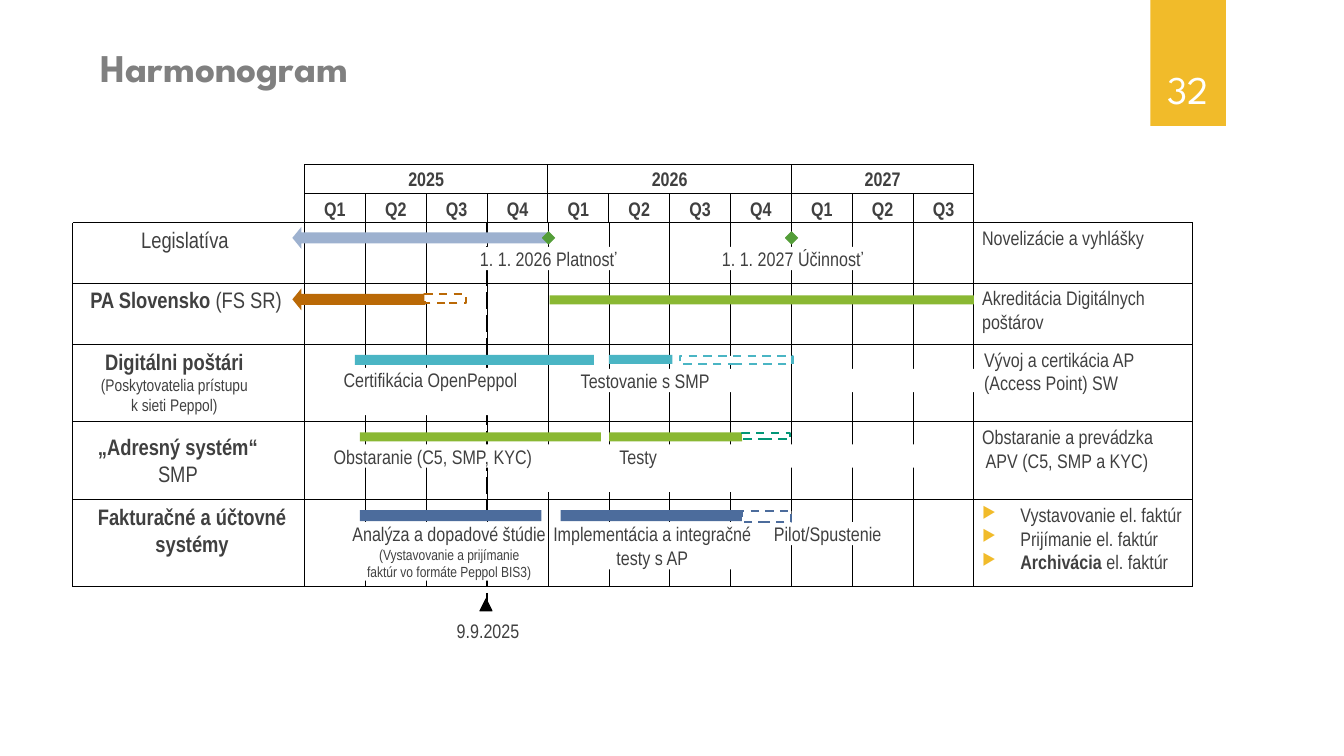
import pptx
import pptx.util
import pptx.dml.color
import pptx.enum.dml
import pptx.enum.shapes
import pptx.enum.text
import pptx.oxml
import pptx.oxml.ns
from lxml import etree

Inches, Pt = pptx.util.Inches, pptx.util.Pt
SHAPE = pptx.enum.shapes.MSO_SHAPE
DASH = pptx.enum.dml.MSO_LINE
ALIGN = pptx.enum.text.PP_ALIGN
ANCHOR = pptx.enum.text.MSO_ANCHOR

COLORS = {
    "black": "000000", "white": "FFFFFF", "text": "404040", "title": "808080",
    "accent": "F1BB2A", "law": "9DB1CF", "authority": "BA6906", "teal": "4AB5C4",
    "green": "8AB833", "pilot": "029676", "invoicing": "4C6C9C", "milestone": "549E39",
}
BODY, HEADING = "Arial Narrow", "League Spartan"

# Content: **bold** marks bold runs; a line is (size, text)
TITLE, PAGE = "Harmonogram", "32"
YEARS = [("2025", 4), ("2026", 4), ("2027", 3)]
ROW_EDGES = [2.21, 2.81, 3.41, 4.18, 4.95, 5.82]
TABLE_LEFT, CHART_LEFT, CHART_RIGHT, TABLE_RIGHT = 0.72, 3.02, 9.66, 11.83
YEAR_TOP, HEADER_HEIGHT = 1.63, 0.29
TODAY = 4.83

# (left, top, width, height), lines
ROW_NAMES = [
    ((0.8, 2.24, 2.07, 0.53), [(16, "Legislatíva")]),
    ((0.8, 2.84, 2.09, 0.53), [(16, "**PA Slovensko** (FS SR)")]),
    ((0.8, 3.45, 1.86, 0.67), [(16, "**Digitálni poštári**"),
                               (12, "(Poskytovatelia prístupu"), (12, "k sieti Peppol)")]),
    ((0.8, 4.3, 1.93, 0.6), [(16, "**„Adresný systém“**"), (16, "SMP")]),
    ((0.8, 4.99, 2.21, 0.8), [(16, "**Fakturačné a účtovné**"), (16, "**systémy**")]),
]
ROW_NOTES = [
    ((9.74, 2.24, 2.09, 0.23), [(14, "Novelizácie a vyhlášky")]),
    ((9.74, 2.84, 2.09, 0.47), [(14, "Akreditácia Digitálnych"), (14, "poštárov")]),
    ((9.76, 3.45, 2.07, 0.7), [(14, "Vývoj a certikácia AP"), (14, "(Access Point) SW")]),
    ((9.74, 4.22, 2.09, 0.7), [(14, "Obstaranie a prevádzka"), (14, " APV (C5, SMP a KYC)")]),
]
INVOICING_TASKS = ((9.74, 4.99, 2.09, 0.7), [
    (14, "Vystavovanie el. faktúr"), (14, "Prijímanie el. faktúr"),
    (14, "**Archivácia** el. faktúr")])

ARROWS = [((2.9, 2.25, 2.54, 0.22), "law"), ((2.9, 2.86, 1.32, 0.22), "authority")]
BARS = [
    ((5.45, 2.93, 4.21, 0.09), "green"),
    ((3.52, 3.52, 2.37, 0.1), "teal"), ((6.04, 3.52, 0.63, 0.09), "teal"),
    ((3.57, 4.29, 2.39, 0.09), "green"), ((6.04, 4.29, 1.32, 0.09), "green"),
    ((3.57, 5.06, 1.8, 0.11), "invoicing"), ((5.56, 5.06, 1.8, 0.11), "invoicing"),
]
PLANNED_BARS = [
    ((4.21, 2.92, 0.41, 0.09), "authority"), ((6.74, 3.53, 1.12, 0.08), "teal"),
    ((7.36, 4.3, 0.48, 0.06), "pilot"), ((7.36, 5.07, 0.49, 0.11), "invoicing"),
]
MARKERS = [
    (SHAPE.DIAMOND, (5.38, 2.3, 0.12, 0.12), "milestone"),
    (SHAPE.DIAMOND, (7.79, 2.3, 0.12, 0.12), "milestone"),
    (SHAPE.ISOSCELES_TRIANGLE, (4.76, 5.94, 0.12, 0.12), "black"),
]
# White panels that interrupt the grid, with or without text
LABELS = [
    ((7.87, 3.66, 2.03, 0.23), ALIGN.LEFT, []),
    ((7.39, 4.41, 1.98, 0.23), ALIGN.LEFT, []),
    ((4.76, 2.45, 1.35, 0.23), ALIGN.LEFT, [(14, "1. 1. 2026 Platnosť")]),
    ((7.16, 2.45, 1.39, 0.23), ALIGN.LEFT, [(14, "1. 1. 2027 Účinnosť")]),
    ((3.3, 3.65, 1.94, 0.47), ALIGN.CENTER, [(14, "Certifikácia OpenPeppol")]),
    ((5.76, 3.66, 1.94, 0.23), ALIGN.LEFT, [(14, "Testovanie s SMP")]),
    ((5.35, 4.41, 1.96, 0.47), ALIGN.CENTER, [(14, "Testy")]),
    ((3.31, 4.41, 1.97, 0.23), ALIGN.LEFT, [(14, "Obstaranie (C5, SMP, KYC)")]),
    ((3.5, 5.18, 1.91, 0.58), ALIGN.CENTER, [
        (14, "Analýza a dopadové štúdie"), (10.5, "(Vystavovanie a prijímanie"),
        (10.5, "faktúr vo formáte Peppol BIS3)")]),
    ((5.49, 5.18, 1.96, 0.47), ALIGN.CENTER, [
        (14, "Implementácia a integračné"), (14, "testy s AP")]),
    ((7.68, 5.18, 1.06, 0.23), ALIGN.CENTER, [(14, "Pilot/Spustenie")]),
]
TODAY_LABEL = ((4.53, 6.14, 0.8, 0.23), [(14, "9.9.2025")])

presentation = pptx.Presentation()
presentation.slide_width, presentation.slide_height = Inches(13.33), Inches(7.5)
slide = presentation.slides.add_slide(presentation.slide_layouts[5])


def rgb(color):
    return pptx.dml.color.RGBColor.from_string(COLORS[color])


def set_font(font, size, color="text", face=BODY):
    font.size, font.name = Pt(size), face
    font.color.rgb = rgb(color)


def add_bullet(paragraph):
    properties = paragraph._p.get_or_add_pPr()
    properties.set("marL", str(Inches(0.38)))
    properties.set("indent", str(-Inches(0.38)))
    bullet_color = etree.SubElement(properties, pptx.oxml.ns.qn("a:buClr"))
    etree.SubElement(bullet_color, pptx.oxml.ns.qn("a:srgbClr"), val=COLORS["accent"])
    etree.SubElement(properties, pptx.oxml.ns.qn("a:buSzPct"), val="80000")
    etree.SubElement(properties, pptx.oxml.ns.qn("a:buChar"), char="▶")


def write(shape, lines, align=ALIGN.LEFT, anchor=ANCHOR.TOP, bullets=False):
    frame = shape.text_frame
    frame.word_wrap, frame.vertical_anchor = False, anchor
    frame.margin_left = frame.margin_right = frame.margin_top = frame.margin_bottom = 0
    for index, (size, text) in enumerate(lines):
        paragraph = frame.add_paragraph() if index else frame.paragraphs[0]
        if bullets:
            add_bullet(paragraph)
        paragraph.alignment = align
        set_font(paragraph.font, size)
        runs = [(part, i % 2 == 1) for i, part in enumerate(text.split("**")) if part]
        for part, bold in runs:
            run = paragraph.add_run()
            run.text = part
            (run if len(runs) > 1 else paragraph).font.bold = bold


def add_block(box, fill=None, line=None, width=0.75, dash=None, kind=SHAPE.RECTANGLE):
    shape = slide.shapes.add_shape(kind, *map(Inches, box))
    shape.shadow.inherit = False
    if fill:
        shape.fill.solid()
        shape.fill.fore_color.rgb = rgb(fill)
    else:
        shape.fill.background()
    if line:
        shape.line.color.rgb = rgb(line)
        shape.line.width = Pt(width)
        shape.line.dash_style = dash
    else:
        shape.line.fill.background()
    return shape


def add_line(x1, y1, x2, y2, width, dash=None):
    line = slide.shapes.add_connector(
        pptx.enum.shapes.MSO_CONNECTOR.STRAIGHT, *map(Inches, (x1, y1, x2, y2)))
    line.line.color.rgb = rgb("black")
    line.line.width = Pt(width)
    line.line.dash_style = dash
    etree.SubElement(line._element.spPr, pptx.oxml.ns.qn("a:effectLst"))


def add_text(box, lines, align=ALIGN.LEFT, bullets=False):
    write(slide.shapes.add_textbox(*map(Inches, box)), lines, align, bullets=bullets)


# Title and page number
title = slide.shapes.title
title.left, title.top, title.width, title.height = map(Inches, (0.9, 0.38, 10.29, 0.57))
title.text_frame.text = TITLE
title.text_frame.vertical_anchor = ANCHOR.TOP
heading = title.text_frame.paragraphs[0]
heading.alignment = ALIGN.LEFT
set_font(heading.font, 28, "title", HEADING)
heading.font.bold = True

add_block((11.41, 0, 0.75, 1.25), "accent")
page = slide.shapes.add_textbox(*map(Inches, (11.32, 0.32, 0.92, 0.84))).text_frame
page.text, page.word_wrap, page.vertical_anchor = PAGE, True, ANCHOR.BOTTOM
page.paragraphs[0].alignment = ALIGN.CENTER
set_font(page.paragraphs[0].font, 28, "white", HEADING)

# Year and quarter headers
quarter_count = sum(quarters for _, quarters in YEARS)
quarter_width = (CHART_RIGHT - CHART_LEFT) / quarter_count
header_cells = []
x = CHART_LEFT
for year, quarters in YEARS:
    header_cells.append((x, YEAR_TOP, quarters * quarter_width, year))
    for quarter in range(quarters):
        header_cells.append((x + quarter * quarter_width, YEAR_TOP + HEADER_HEIGHT,
                             quarter_width, f"Q{quarter + 1}"))
    x += quarters * quarter_width
for left, top, width, text in header_cells:
    cell = add_block((left, top, width, HEADER_HEIGHT), line="black")
    write(cell, [(14, f"**{text}**")], ALIGN.CENTER, ANCHOR.MIDDLE)

# Grid
top, bottom = ROW_EDGES[0], ROW_EDGES[-1]
for quarter in range(1, quarter_count):
    x = CHART_LEFT + quarter * quarter_width
    add_line(x, top, x, bottom, 0.25)
for x in (TABLE_LEFT, CHART_LEFT, CHART_RIGHT, TABLE_RIGHT):
    add_line(x, top, x, bottom, 0.75)
for y in ROW_EDGES:
    add_line(TABLE_LEFT, y, TABLE_RIGHT, y, 0.75 if y in (top, bottom) else 0.25)
add_line(TODAY, top, TODAY, 6, 1.5, DASH.LONG_DASH)

# Labels on the chart, then bars and markers
for box, align, lines in LABELS:
    write(add_block(box, "white"), lines, align)
for box, color in ARROWS:
    arrow = add_block(box, color, kind=SHAPE.LEFT_ARROW)
    arrow.adjustments[0], arrow.adjustments[1] = 0.5, 0.41
for box, color in BARS:
    add_block(box, color)
for box, color in PLANNED_BARS:
    add_block(box, "white", color, 1.5, DASH.DASH)
for kind, box, color in MARKERS:
    add_block(box, color, color, kind=kind)

# Row names, notes and the current date
for box, lines in ROW_NAMES:
    add_text(box, lines, ALIGN.CENTER)
for box, lines in ROW_NOTES + [TODAY_LABEL]:
    add_text(box, lines)
add_text(*INVOICING_TASKS, bullets=True)

presentation.save("out.pptx")
